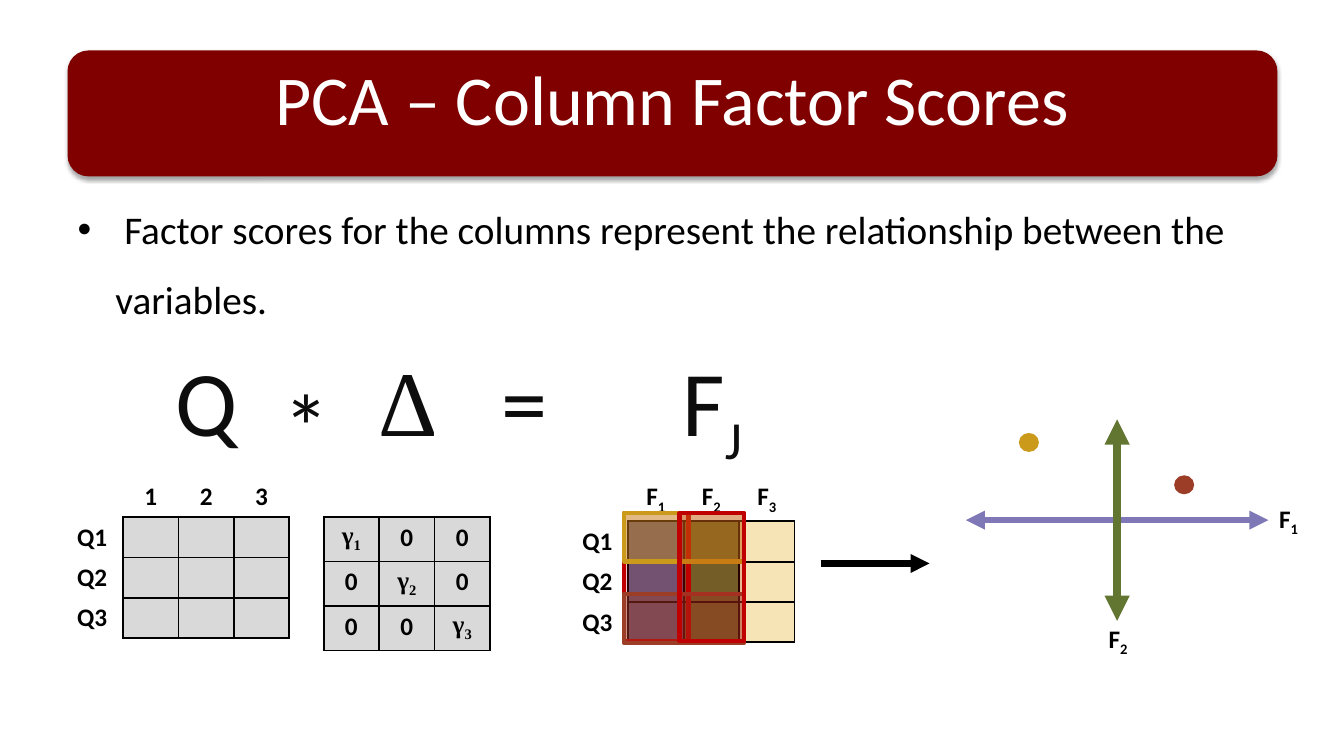
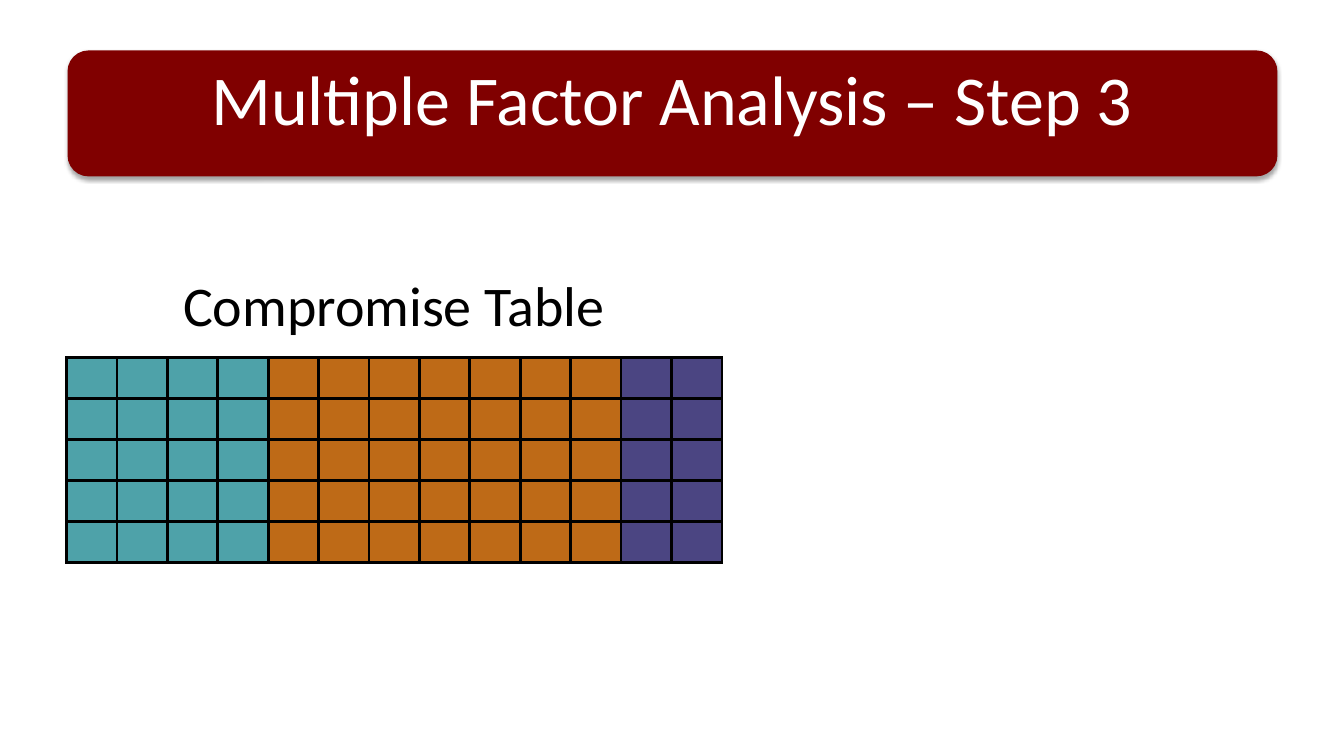
from dataclasses import dataclass
from typing import NamedTuple

from lxml.etree import SubElement
from pptx import Presentation
from pptx.dml.color import RGBColor
from pptx.enum.shapes import MSO_CONNECTOR, MSO_SHAPE
from pptx.enum.text import MSO_ANCHOR, MSO_AUTO_SIZE, PP_ALIGN
from pptx.oxml.ns import qn
from pptx.util import Inches, Pt


@dataclass(frozen=True)
class Theme:
    sans: str = "Calibri"
    serif: str = "Times New Roman"
    black: str = "000000"
    white: str = "FFFFFF"
    ink: str = "0D0D0D"
    band: str = "800000"
    gray: str = "D9D9D9"
    blue: str = "60668D"
    green: str = "627531"
    cream: str = "F6E4B7"
    lilac: str = "7E78B7"
    red: str = "C00000"
    gold: str = "CC9A1A"
    rust: str = "9C3D28"
    teal: str = "4EA2A9"
    orange: str = "BE6A17"
    purple: str = "4B4582"
    title: int = 50
    body: int = 28
    symbol: int = 66
    head: int = 40
    label: int = 18


THEME = Theme()


class Box(NamedTuple):
    left: float
    top: float
    width: float
    height: float

    def place(self) -> list:
        return [Inches(side) for side in self]


class Cell(NamedTuple):
    text: str
    fill: str
    sides: str = "LRTB"


class Mark(NamedTuple):
    box: Box
    color: str
    alpha: int = 100
    width: float = 3
    form: MSO_SHAPE = MSO_SHAPE.RECTANGLE


class Arrow(NamedTuple):
    start: tuple
    end: tuple
    color: str
    width: float
    ends: tuple = ("headEnd", "tailEnd")


class Label(NamedTuple):
    text: str
    box: Box
    size: int = THEME.symbol
    color: str = THEME.ink
    font: str = THEME.sans
    bold: bool = False
    wrap: bool = True


TITLE = Box(0.67, 0.5, 12, 1.25)
BODY = Box(0.67, 1.75, 12, 4.95)
ROW = 0.4


def rgb(color: str) -> RGBColor:
    return RGBColor.from_string(color)


def write(para, text: str, size: int, color: str, font: str = THEME.sans,
          bold: bool = False, align=PP_ALIGN.CENTER) -> None:
    """Fill a paragraph; an underscore starts a subscript."""
    base, _, sub = text.partition("_")
    para.alignment = align
    para.font.size = Pt(size)
    para.font.name = font
    para.font.bold = bold
    para.font.color.rgb = rgb(color)
    para.add_run().text = base
    if sub:
        run = para.add_run()
        run.text = sub
        run._r.get_or_add_rPr().set("baseline", "-25000")


def add_label(slide, label: Label) -> None:
    frame = slide.shapes.add_textbox(*label.box.place()).text_frame
    frame.word_wrap = label.wrap
    write(frame.paragraphs[0], label.text, label.size, label.color,
          label.font, label.bold)


def add_mark(slide, mark: Mark):
    shape = slide.shapes.add_shape(mark.form, *mark.box.place())
    shape.shadow.inherit = False
    shape.fill.solid()
    shape.fill.fore_color.rgb = rgb(mark.color)
    if mark.alpha < 100:
        tint = shape.element.spPr.find(qn("a:solidFill"))[0]
        SubElement(tint, qn("a:alpha"), val=str(mark.alpha * 1000))
    if mark.width:
        shape.line.color.rgb = rgb(mark.color)
        shape.line.width = Pt(mark.width)
    else:
        shape.line.fill.background()
    return shape


def add_arrow(slide, arrow: Arrow) -> None:
    points = [Inches(n) for n in arrow.start + arrow.end]
    line = slide.shapes.add_connector(MSO_CONNECTOR.STRAIGHT, *points)
    line.line.color.rgb = rgb(arrow.color)
    line.line.width = Pt(arrow.width)
    props = line.element.spPr
    for end in arrow.ends:
        SubElement(props.find(qn("a:ln")), qn(f"a:{end}"), type="triangle")
    SubElement(props, qn("a:effectLst"))


def add_grid(slide, left: float, top: float, widths: list, rows: list,
             border: float = 1.5) -> None:
    box = Box(left, top, sum(widths), ROW * len(rows))
    frame = slide.shapes.add_table(len(rows), len(widths), *box.place())
    table = frame.table
    table.first_row = table.horz_banding = False
    for column, width in zip(table.columns, widths):
        column.width = Inches(width)
    data = [cell for row in rows for cell in row]
    for cell, spot in zip(data, table.iter_cells()):
        spot.fill.solid()
        spot.fill.fore_color.rgb = rgb(cell.fill)
        if cell.text:
            font = THEME.serif if cell.text.startswith("γ") else THEME.sans
            write(spot.text_frame.paragraphs[0], cell.text, THEME.label,
                  THEME.black, font, True)
    # Borders come before the fill in each cell
    for cell, props in zip(data, frame.element.iter(qn("a:tcPr"))):
        for place, side in enumerate("LRTB"):
            edge = SubElement(props, qn(f"a:ln{side}"), w=str(Pt(border)))
            if side in cell.sides:
                fill = SubElement(edge, qn("a:solidFill"))
                SubElement(fill, qn("a:srgbClr"), val=THEME.black)
            else:
                SubElement(edge, qn("a:noFill"))
            props.insert(place, edge)


def add_scores(slide, left: float, heads: list, fills: list) -> None:
    """A 3 by 3 grid with column heads and row names."""
    top = [Cell("", THEME.white, "")]
    top += [Cell(head, THEME.white, "B") for head in heads]
    rows = [[Cell(f"Q{n}", THEME.white, "R")]
            + [Cell("", fill) for fill in fills] for n in (1, 2, 3)]
    add_grid(slide, left, 4.73, [0.61] + [0.55] * 3, [top] + rows)


def set_master(deck, slide) -> None:
    """Put the title band and the placeholder places on the master."""
    master = deck.slide_master
    for shape, box in zip(master.placeholders, (TITLE, BODY)):
        shape.left, shape.top, shape.width, shape.height = box.place()
    band = add_mark(slide, Mark(TITLE, THEME.band, width=0,
                                form=MSO_SHAPE.ROUNDED_RECTANGLE))
    glow = SubElement(band.element.spPr.find(qn("a:effectLst")),
                      qn("a:outerShdw"), blurRad=str(Pt(3.1)),
                      dist=str(Pt(1.8)), dir="5400000", rotWithShape="0")
    tint = SubElement(glow, qn("a:srgbClr"), val=THEME.black)
    SubElement(tint, qn("a:alpha"), val="35000")
    band.element.nvSpPr.cNvPr.set("id", "20")
    master.shapes.element.insert(2, band.element)


def set_title(slide, text: str) -> None:
    frame = slide.shapes.title.text_frame
    frame.auto_size = MSO_AUTO_SIZE.NONE
    frame.vertical_anchor = MSO_ANCHOR.TOP
    write(frame.paragraphs[0], text, THEME.title, THEME.white)


def draw_scores(slide) -> None:
    set_title(slide, "PCA – Column Factor Scores")
    frame = slide.placeholders[1].text_frame
    frame.auto_size = MSO_AUTO_SIZE.NONE
    para = frame.paragraphs[0]
    para.line_spacing = 1.5
    para.space_before = Pt(0)
    write(para, " Factor scores for the columns represent the relationship "
          "between the variables.", THEME.body, THEME.black,
          align=PP_ALIGN.LEFT)

    # Formula
    for text, left, top, font in (
            ("Q", 1.21, 3.36, THEME.sans), ("*", 2.21, 3.6, THEME.sans),
            ("Δ", 3.21, 3.36, THEME.serif), ("=", 4.37, 3.36, THEME.sans),
            ("F_J", 6.23, 3.36, THEME.sans)):
        add_label(slide, Label(text, Box(left, top, 1.67, 1.21), font=font))

    # Matrices
    add_scores(slide, 0.61, ["1", "2", "3"], [THEME.gray] * 3)
    add_grid(slide, 3.21, 5.13, [0.55] * 3,
             [[Cell(f"γ_{row}" if row == col else "0", THEME.gray)
               for col in (1, 2, 3)] for row in (1, 2, 3)])
    add_scores(slide, 5.62, ["F_1", "F_2", "F_3"],
               [THEME.blue, THEME.green, THEME.cream])

    # Arrow and axes
    for arrow in (
            Arrow((8.14, 5.59), (9.22, 5.59), THEME.black, 4.5, ("tailEnd",)),
            Arrow((9.58, 5.16), (12.58, 5.16), THEME.lilac, 4.5),
            Arrow((11.08, 4.16), (11.08, 6.16), THEME.green, 6)):
        add_arrow(slide, arrow)
    for text, left, top in (("F_1", 12.57, 4.94), ("F_2", 10.88, 6.13)):
        add_label(slide, Label(text, Box(left, top, 0.42, 0.4), THEME.label,
                               THEME.black, bold=True, wrap=False))

    # Points and frames around rows and columns
    for mark in (
            Mark(Box(11.66, 4.73, 0.17, 0.16), THEME.rust, 100, 2,
                 MSO_SHAPE.OVAL),
            Mark(Box(6.19, 5.09, 0.64, 1.27), THEME.red, 20),
            Mark(Box(6.19, 5.09, 1.19, 0.48), THEME.gold, 40),
            Mark(Box(10.12, 4.31, 0.17, 0.16), THEME.gold, 100, 2,
                 MSO_SHAPE.OVAL),
            Mark(Box(6.19, 5.89, 1.19, 0.49), THEME.rust, 40),
            Mark(Box(6.74, 5.09, 0.64, 1.27), THEME.red, 20)):
        add_mark(slide, mark)


def draw_table(slide) -> None:
    set_title(slide, "Multiple Factor Analysis – Step 3")
    # Three blocks side by side
    left = 0.66
    for count, fill in ((4, THEME.teal), (7, THEME.orange),
                        (2, THEME.purple)):
        add_grid(slide, left, 3.55, [0.5] * count,
                 [[Cell("", fill)] * count] * 5, 2.25)
        left += 0.5 * count
    add_label(slide, Label("Compromise Table", Box(0.66, 2.63, 6.49, 0.77),
                           THEME.head, THEME.black))


def main() -> None:
    deck = Presentation()
    deck.slide_width, deck.slide_height = Inches(13.33), Inches(7.5)
    scores = deck.slides.add_slide(deck.slide_layouts[1])
    set_master(deck, scores)
    draw_scores(scores)
    draw_table(deck.slides.add_slide(deck.slide_layouts[5]))
    deck.save("out.pptx")


if __name__ == "__main__":
    main()
